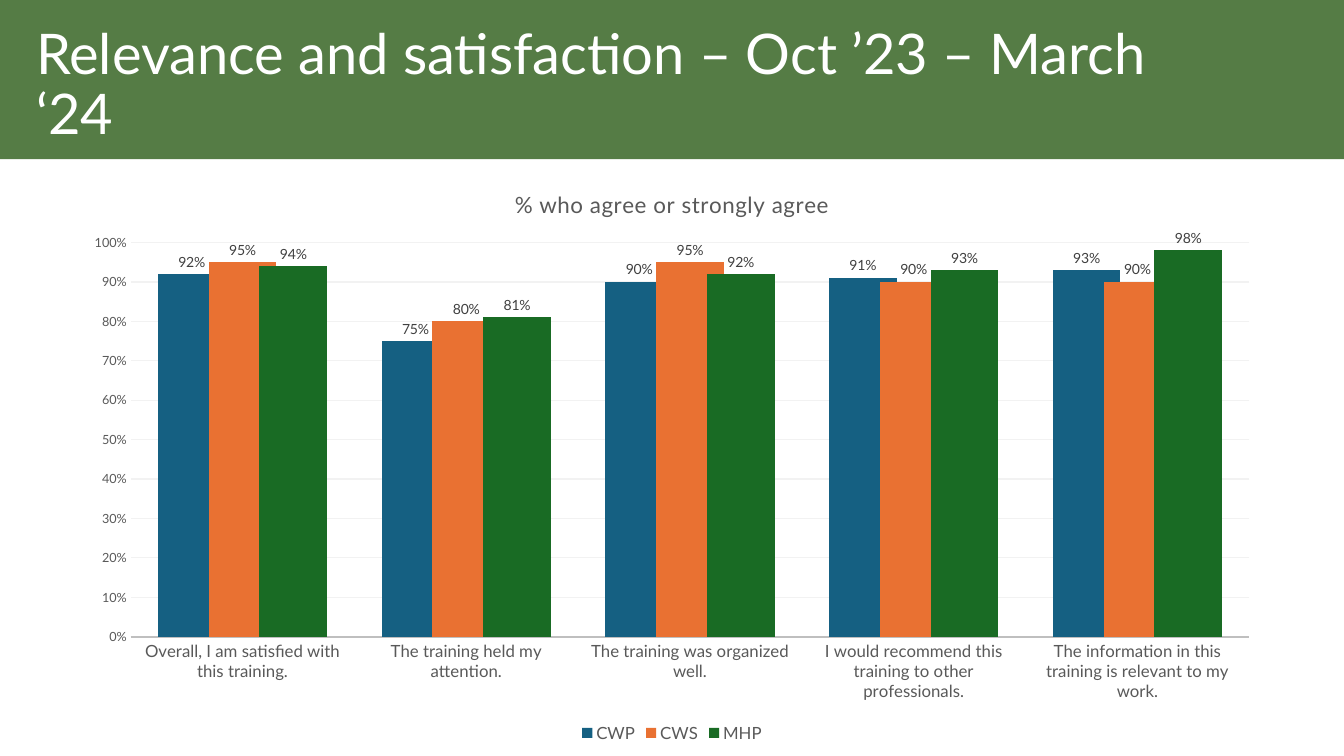
from lxml.etree import SubElement
from pptx import Presentation
from pptx.chart.data import CategoryChartData
from pptx.dml.color import RGBColor
from pptx.enum.chart import XL_CHART_TYPE, XL_LABEL_POSITION, XL_LEGEND_POSITION, XL_TICK_MARK
from pptx.enum.shapes import MSO_SHAPE
from pptx.enum.text import MSO_ANCHOR
from pptx.oxml import parse_xml
from pptx.oxml.ns import nsdecls, qn
from pptx.util import Inches, Pt

FONT = "Lato"
WHITE = RGBColor(0xFF, 0xFF, 0xFF)
BLACK = RGBColor(0x00, 0x00, 0x00)
BANNER_GREEN = RGBColor(0x55, 0x7C, 0x45)
TEXT_GRAY = RGBColor(0x59, 0x59, 0x59)
LABEL_GRAY = RGBColor(0x40, 0x40, 0x40)
AXIS_GRAY = RGBColor(0xBF, 0xBF, 0xBF)
GRID_GRAY = RGBColor(0xF2, 0xF2, 0xF2)
BLUE = RGBColor(0x15, 0x60, 0x82)
ORANGE = RGBColor(0xE9, 0x71, 0x32)
GREEN = RGBColor(0x19, 0x6B, 0x24)

STATEMENTS = [
    "Overall, I am satisfied with this training.",
    "The training held my attention.",
    "The training was organized well.",
    "I would recommend this training to other professionals.",
    "The information in this training is relevant to my work.",
]
GROUPS = [
    ("CWP", BLUE, (0.92, 0.75, 0.9, 0.91, 0.93)),
    ("CWS", ORANGE, (0.95, 0.8, 0.95, 0.9, 0.9)),
    ("MHP", GREEN, (0.94, 0.81, 0.92, 0.93, 0.98)),
]
PLOT_SHARES = {"x": 0.05, "y": 0.13, "w": 0.93, "h": 0.68}


def style_font(font, size, color):
    """Apply the slide's typeface with a size and colour."""
    font.name = FONT
    font.size = Pt(size)
    font.bold = False
    font.color.rgb = color


def add_banner(slide, left, top, width, height):
    """Draw the green title band and the slide title inside it."""
    band = slide.shapes.add_shape(MSO_SHAPE.RECTANGLE, left, top, width, height)
    band.shadow.inherit = False
    band.fill.solid()
    band.fill.fore_color.rgb = BANNER_GREEN
    band.line.fill.background()

    title = slide.shapes.add_textbox(
        left + Inches(0.26), top + Inches(0.21), width - Inches(1.51), height - Inches(0.29))
    frame = title.text_frame
    frame.word_wrap = True
    frame.vertical_anchor = MSO_ANCHOR.MIDDLE
    paragraph = frame.paragraphs[0]
    paragraph.text = "Relevance and satisfaction – Oct ’23 – March ‘24"
    paragraph.line_spacing = 0.9
    style_font(paragraph.font, 40, WHITE)


def place_plot(chart):
    """Fix the inner plot area as shares of the chart."""
    plot_area = chart.element.find(".//" + qn("c:plotArea"))
    for layout in plot_area.findall(qn("c:layout")):
        plot_area.remove(layout)
    layout = parse_xml(
        f'<c:layout {nsdecls("c")}><c:manualLayout><c:layoutTarget val="inner"/>'
        '<c:xMode val="edge"/><c:yMode val="edge"/></c:manualLayout></c:layout>')
    for name, share in PLOT_SHARES.items():
        SubElement(layout[0], qn(f"c:{name}")).set("val", str(share))
    plot_area.insert(0, layout)


def style_axes(chart):
    """Format the statement axis and the percentage axis."""
    for axis, size in ((chart.category_axis, 12), (chart.value_axis, 9)):
        axis.major_tick_mark = XL_TICK_MARK.NONE
        axis.minor_tick_mark = XL_TICK_MARK.NONE
        style_font(axis.tick_labels.font, size, TEXT_GRAY)
    chart.category_axis.format.line.color.rgb = AXIS_GRAY
    chart.category_axis.format.line.width = Pt(1.25)

    percent_axis = chart.value_axis
    percent_axis.minimum_scale = 0
    percent_axis.maximum_scale = 1
    percent_axis.major_unit = 0.1
    percent_axis.format.line.fill.background()
    percent_axis.tick_labels.number_format = "0%"
    percent_axis.tick_labels.number_format_is_linked = False
    percent_axis.major_gridlines.format.line.color.rgb = GRID_GRAY
    percent_axis.major_gridlines.format.line.width = Pt(0.75)


def style_series(series, color):
    """Give one group's columns a translucent fill and value labels."""
    series.invert_if_negative = False
    fill = series.format.fill
    fill.solid()
    fill.fore_color.rgb = color
    color_element = series.format.element if hasattr(series.format, "element") else None
    if color_element is None:
        color_element = next(series._element.iter(qn("a:srgbClr")))
    SubElement(color_element, qn("a:alpha")).set("val", "70000")
    labels = series.data_labels
    labels.show_value = True
    labels.position = XL_LABEL_POSITION.OUTSIDE_END
    labels.number_format = "0%"
    labels.number_format_is_linked = False
    style_font(labels.font, 10, LABEL_GRAY)


def add_agreement_chart(slide, left, top, width, height):
    """Add the clustered columns of agreement by statement and group."""
    data = CategoryChartData(number_format="0%")
    data.categories = STATEMENTS
    for name, _, shares in GROUPS:
        data.add_series(name, shares)
    chart = slide.shapes.add_chart(
        XL_CHART_TYPE.COLUMN_CLUSTERED, left, top, width, height, data).chart
    style_font(chart.font, 10, BLACK)

    chart.has_title = True
    paragraph = chart.chart_title.text_frame.paragraphs[0]
    paragraph.text = "% who agree or strongly agree"
    style_font(paragraph.font, 16, TEXT_GRAY)
    paragraph.font._element.set("spc", "50")
    chart.chart_title.include_in_layout = False

    chart.has_legend = True
    chart.legend.position = XL_LEGEND_POSITION.BOTTOM
    chart.legend.include_in_layout = False
    style_font(chart.legend.font, 12, TEXT_GRAY)

    style_axes(chart)
    plot = chart.plots[0]
    plot.gap_width = 80
    plot.overlap = 25
    plot.vary_by_categories = False
    for series, (_, color, _) in zip(plot.series, GROUPS):
        style_series(series, color)
    place_plot(chart)


def main():
    """Build the slide and save it."""
    presentation = Presentation()
    presentation.slide_width = Inches(13.33)
    presentation.slide_height = Inches(7.5)
    slide = presentation.slides.add_slide(presentation.slide_layouts[6])
    add_banner(slide, 0, 0, presentation.slide_width, Inches(1.58))
    add_agreement_chart(slide, Inches(0.7), Inches(1.66), Inches(11.93), Inches(5.75))
    presentation.save("out.pptx")


if __name__ == "__main__":
    main()
